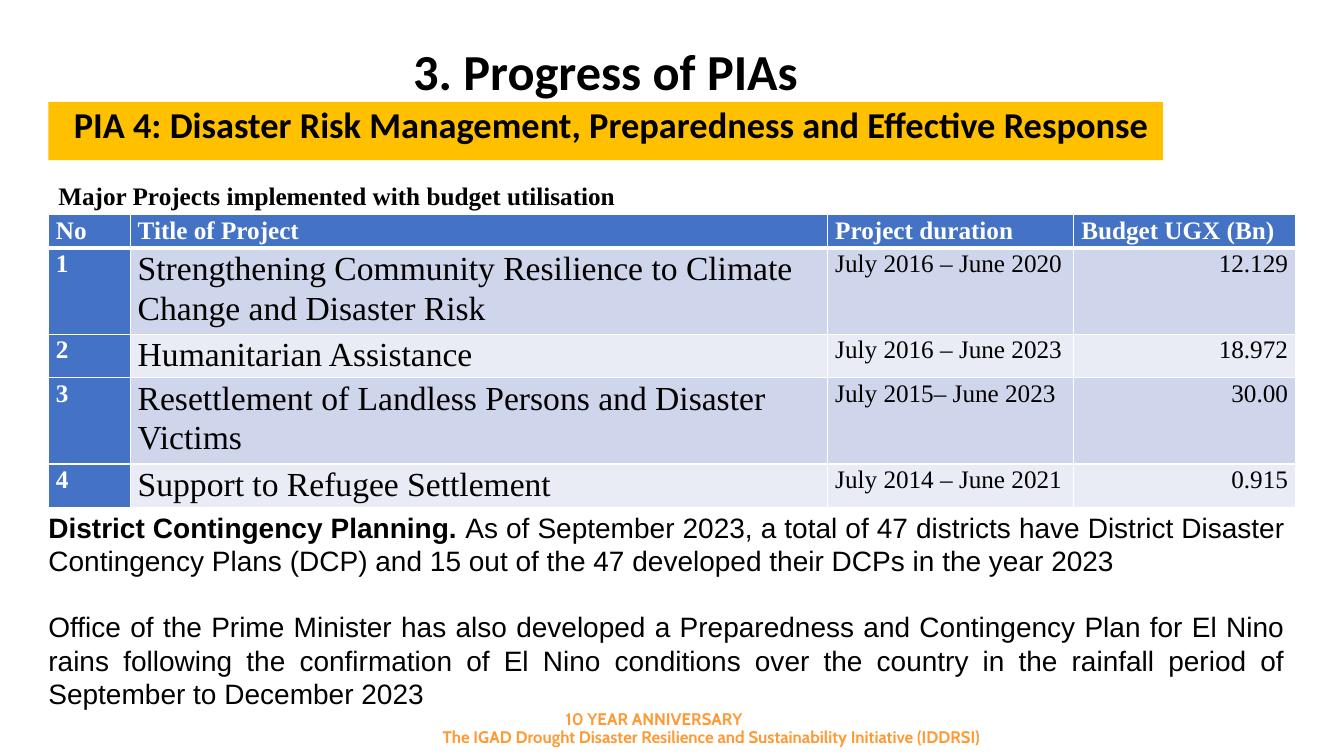
from lxml.etree import SubElement
from pptx import Presentation
from pptx.dml.color import RGBColor
from pptx.enum.shapes import MSO_SHAPE as Shape
from pptx.enum.text import PP_ALIGN as Align
from pptx.oxml.ns import qn
from pptx.util import Cm, Pt

BLACK = RGBColor(0x00, 0x00, 0x00)
WHITE = RGBColor(0xFF, 0xFF, 0xFF)
ORANGE = RGBColor(0xFF, 0x99, 0x33)
GOLD = RGBColor(0xFF, 0xC0, 0x00)
BLUE = RGBColor(0x44, 0x72, 0xC4)
BAND_DARK = RGBColor(0xCF, 0xD5, 0xEA)
BAND_LIGHT = RGBColor(0xE9, 0xEB, 0xF5)
SERIF = "Times New Roman"


def write(paragraph, text, size=18, font=SERIF, color=BLACK, bold=False,
          align=Align.LEFT, line=None, after=None):
    paragraph.alignment = align
    paragraph.line_spacing = line
    if after is not None:
        paragraph.space_after = Pt(after)
    run = paragraph.add_run()
    run.text = text
    run.font.size = Pt(size)
    run.font.name = font
    run.font.bold = bold
    run.font.color.rgb = color


def add_text_box(left, top, width, height, margin=None):
    """Add a wrapping text box, lengths in cm, and return its text frame."""
    frame = slide.shapes.add_textbox(Cm(left), Cm(top), Cm(width), Cm(height)).text_frame
    frame.word_wrap = True
    if margin is not None:
        frame.margin_left = frame.margin_right = Cm(margin)
        frame.margin_top = frame.margin_bottom = Cm(margin)
    return frame


presentation = Presentation()
presentation.slide_width = Cm(33.87)
presentation.slide_height = Cm(19.05)
slide = presentation.slides.add_slide(presentation.slide_layouts[6])

# Footer
footer_lines = [
    (8, 17.73, "10 YEAR ANNIVERSARY"),
    (9.45, 18.19, "The IGAD Drought Disaster Resilience and Sustainability Initiative (IDDRSI)"),
]
for left, top, text in footer_lines:
    footer = add_text_box(left, top, 16.97, 0.76)
    write(footer.paragraphs[0], text, size=12, font="Cabin", color=ORANGE,
          bold=True, align=Align.CENTER)

# Title and banner
title = add_text_box(1.22, 1.02, 28.09, 1.47, margin=0)
write(title.paragraphs[0], "3. Progress of PIAs", size=36, font="Calibri",
      bold=True, align=Align.CENTER)

banner = slide.shapes.add_shape(Shape.RECTANGLE, Cm(1.22), Cm(2.57), Cm(28.09), Cm(1.47))
banner.shadow.inherit = False
banner.fill.solid()
banner.fill.fore_color.rgb = GOLD
banner.line.fill.background()
banner_frame = banner.text_frame
banner_frame.word_wrap = True
banner_frame.margin_left = Cm(0.64)
banner_frame.margin_right = banner_frame.margin_top = banner_frame.margin_bottom = 0
banner_frame.vertical_anchor = 1
write(banner_frame.paragraphs[0],
      "PIA 4: Disaster Risk Management, Preparedness and Effective Response",
      size=26, font="Calibri", bold=True, align=Align.JUSTIFY, after=6)

# Projects table
projects = [
    ("No", "Title of Project", "Project duration", "Budget UGX (Bn)"),
    ("1", "Strengthening Community Resilience to Climate Change and Disaster Risk",
     "July 2016 – June 2020", "12.129"),
    ("2", "Humanitarian Assistance", "July 2016 – June 2023", "18.972"),
    ("3", "Resettlement of Landless Persons and Disaster Victims",
     "July 2015– June 2023", "30.00"),
    ("4", "Support to Refugee Settlement", "July 2014 – June 2021", "0.915"),
]
column_widths = [2.06, 17.58, 6.2, 5.59]
row_heights = [0.84, 2.16, 1.09, 2.16, 1.09]
table = slide.shapes.add_table(len(projects), len(column_widths), Cm(1.22), Cm(5.41),
                               Cm(sum(column_widths)), Cm(sum(row_heights))).table
for column, width in zip(table.columns, column_widths):
    column.width = Cm(width)
for row, height in zip(table.rows, row_heights):
    row.height = Cm(height)

for row_index, project in enumerate(projects):
    for column_index, text in enumerate(project):
        cell = table.cell(row_index, column_index)
        cell.margin_left = cell.margin_right = Cm(0.19)
        cell.margin_top = cell.margin_bottom = 0
        is_heading = row_index == 0 or column_index == 0
        properties = cell._tc.get_or_add_tcPr()
        for side in ("lnL", "lnR", "lnT", "lnB"):
            thick = (row_index, side) in ((0, "lnB"), (1, "lnT"))
            border = SubElement(properties, qn(f"a:{side}"), w=str(Pt(3 if thick else 1)))
            border_fill = SubElement(border, qn("a:solidFill"))
            SubElement(border_fill, qn("a:srgbClr"), val=str(WHITE))
        cell.fill.solid()
        band = BAND_DARK if row_index % 2 else BAND_LIGHT
        cell.fill.fore_color.rgb = BLUE if is_heading else band
        write(cell.text_frame.paragraphs[0], text,
              size=24 if column_index == 1 and not is_heading else 18,
              color=WHITE if is_heading else BLACK, bold=is_heading,
              align=Align.RIGHT if column_index == 3 and not is_heading else Align.LEFT,
              line=1.07, after=8)

caption = add_text_box(1.22, 4.37, 16.97, 1.04)
write(caption.paragraphs[0], "Major Projects implemented with budget utilisation",
      bold=True, line=1.07, after=8)

# Contingency planning
planning = add_text_box(0.97, 12.73, 31.67, 5.38)
body_format = dict(size=20, font="Arial", align=Align.JUSTIFY)
districts = planning.paragraphs[0]
write(districts, "District Contingency Planning. ", bold=True, **body_format)
write(districts, "As of September 2023, a total of 47 districts have District Disaster "
      "Contingency Plans (DCP) and 15 out of the 47 developed their DCPs in the year 2023",
      **body_format)
el_nino = planning.add_paragraph()
el_nino.space_before = Pt(23)
write(el_nino, "Office of the Prime Minister has also developed a Preparedness and "
      "Contingency Plan for El Nino rains following the confirmation of El Nino conditions "
      "over the country in the rainfall period of September to December 2023", **body_format)

presentation.save("out.pptx")
